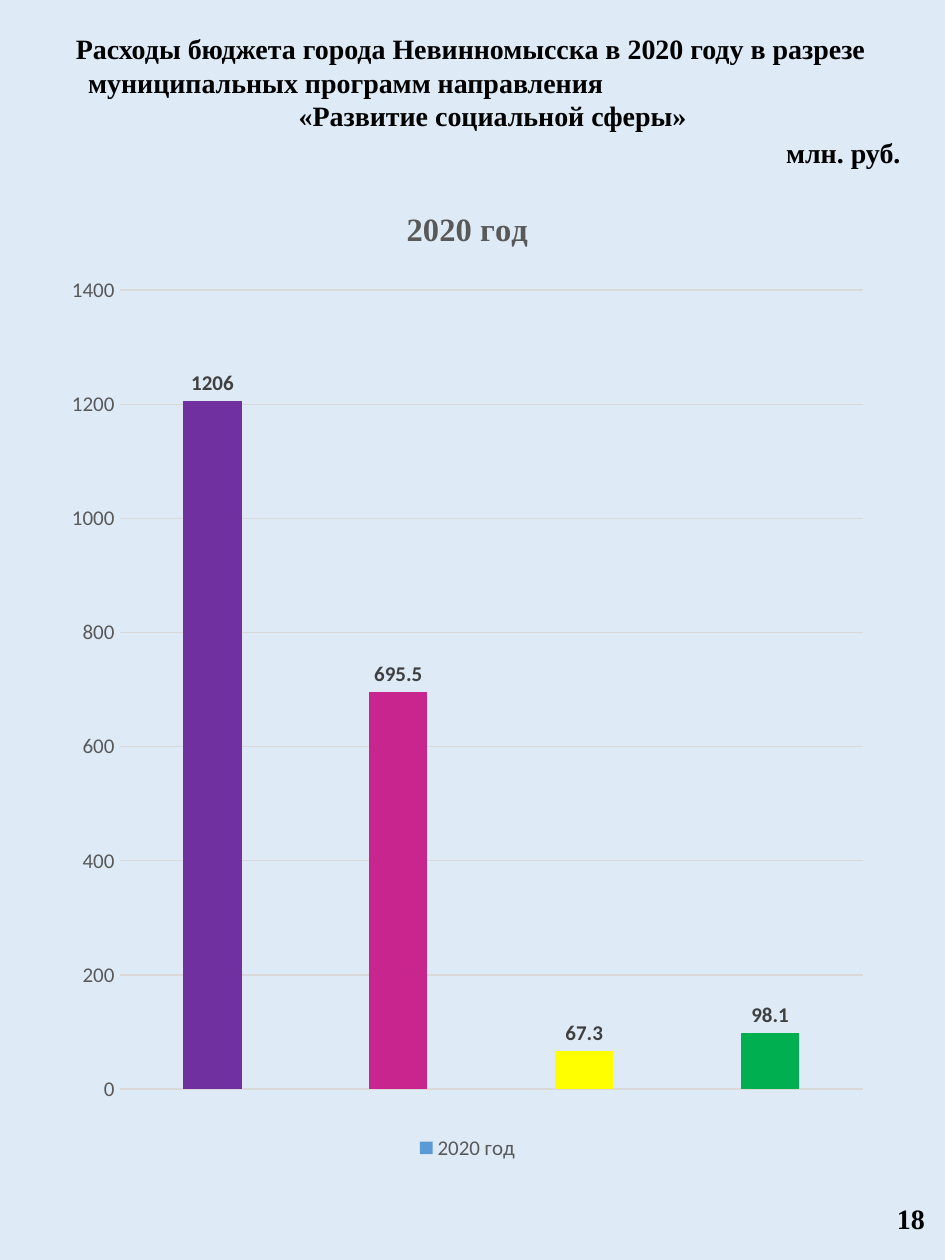
from pptx import Presentation
from pptx.chart.data import CategoryChartData
from pptx.dml.color import RGBColor
from pptx.enum.chart import XL_CHART_TYPE, XL_LABEL_POSITION, XL_LEGEND_POSITION, XL_TICK_MARK
from pptx.enum.text import MSO_ANCHOR, MSO_AUTO_SIZE, PP_ALIGN
from pptx.util import Inches, Pt

COLORS = {
    "background": "DEEBF7", "text": "000000", "muted": "595959",
    "label": "404040", "grid": "D9D9D9", "series": "5B9BD5",
}
BAR_COLORS = ["7030A0", "C8268E", "FFFF00", "00B050"]
SERIF, SANS = "Times New Roman", "Calibri"


class BudgetPage:
    """Holds the style and the current slide."""

    def __init__(self, deck):
        self.page = deck.slides.add_slide(deck.slide_layouts[5])
        self.paint(self.page.background.fill, COLORS["background"])

    def paint(self, fill, color):
        fill.solid()
        fill.fore_color.rgb = RGBColor.from_string(color)

    def style(self, font, size=16, color="text", name=SERIF, bold=True):
        font.size, font.name, font.bold = Pt(size), name, bold
        font.color.rgb = RGBColor.from_string(COLORS[color])

    def place(self, shape, left, top, width, height):
        shape.left, shape.top = Inches(left), Inches(top)
        shape.width, shape.height = Inches(width), Inches(height)

    def add_span(self, para, text):
        span = para.add_run()
        span.text = text
        self.style(span.font)

    def title(self, lines, *bounds):
        shape = self.page.shapes.title
        self.place(shape, *bounds)
        frame = shape.text_frame
        frame.auto_size = MSO_AUTO_SIZE.NONE
        frame.vertical_anchor = MSO_ANCHOR.TOP
        frame.word_wrap = True
        for index, (text, alignment, indent) in enumerate(lines):
            para = frame.add_paragraph() if index else frame.paragraphs[0]
            para.alignment = alignment
            if indent:
                para._p.get_or_add_pPr().set("marL", str(Inches(indent)))
            self.add_span(para, text)

    def text(self, text, *bounds):
        box = self.page.shapes.add_textbox(*map(Inches, bounds))
        box.text_frame.word_wrap = False
        self.add_span(box.text_frame.paragraphs[0], text)

    def column_chart(self, name, values, *bounds):
        data = CategoryChartData()
        data.categories = [str(number) for number in range(1, len(values) + 1)]
        data.add_series(name, values)
        chart = self.page.shapes.add_chart(
            XL_CHART_TYPE.COLUMN_CLUSTERED, *map(Inches, bounds), data).chart
        self.style(chart.font, 10, name=SANS, bold=False)

        # Chart title and legend
        chart.has_title = True
        span = chart.chart_title.text_frame.paragraphs[0].add_run()
        span.text = name
        self.style(span.font, 18.6, "muted")
        chart.has_legend = True
        chart.legend.position = XL_LEGEND_POSITION.BOTTOM
        chart.legend.include_in_layout = False
        self.style(chart.legend.font, 12, "muted", SANS, False)

        # Axes
        chart.category_axis.visible = False
        axis = chart.value_axis
        axis.major_tick_mark = axis.minor_tick_mark = XL_TICK_MARK.NONE
        axis.format.line.fill.background()
        axis.has_major_gridlines = True
        grid = axis.major_gridlines.format.line
        grid.width = Pt(0.75)
        grid.color.rgb = RGBColor.from_string(COLORS["grid"])
        self.style(axis.tick_labels.font, 12, "muted", SANS, False)

        # Columns and their labels
        plot = chart.plots[0]
        plot.gap_width, plot.overlap = 219, -27
        plot.vary_by_categories = False
        series = plot.series[0]
        series.invert_if_negative = False
        self.paint(series.format.fill, COLORS["series"])
        for index, color in enumerate(BAR_COLORS):
            self.paint(series.points[index].format.fill, color)
        labels = series.data_labels
        labels.show_value = True
        labels.position = XL_LABEL_POSITION.OUTSIDE_END
        self.style(labels.font, 12, "label", SANS)


def main():
    deck = Presentation()
    deck.slide_width, deck.slide_height = Inches(7.5), Inches(10)
    page = BudgetPage(deck)

    # Heading and unit
    page.title([
        ("Расходы бюджета города Невинномысска в 2020 году в разрезе", PP_ALIGN.CENTER, 0),
        ("муниципальных программ направления", PP_ALIGN.LEFT, 0.35),
        ("«Развитие социальной сферы»", PP_ALIGN.CENTER, 0),
    ], 0.25, 0.2, 6.97, 0.91)
    page.text("млн. руб.", 6.14, 1.03, 1.12, 0.37)

    # Spending by programme
    page.column_chart("2020 год", [1206, 695.5, 67.3, 98.1], 0.44, 1.4, 6.54, 7.85)

    # Page number
    page.text("18", 7.02, 9.49, 0.51, 0.37)
    deck.save("out.pptx")


if __name__ == "__main__":
    main()
